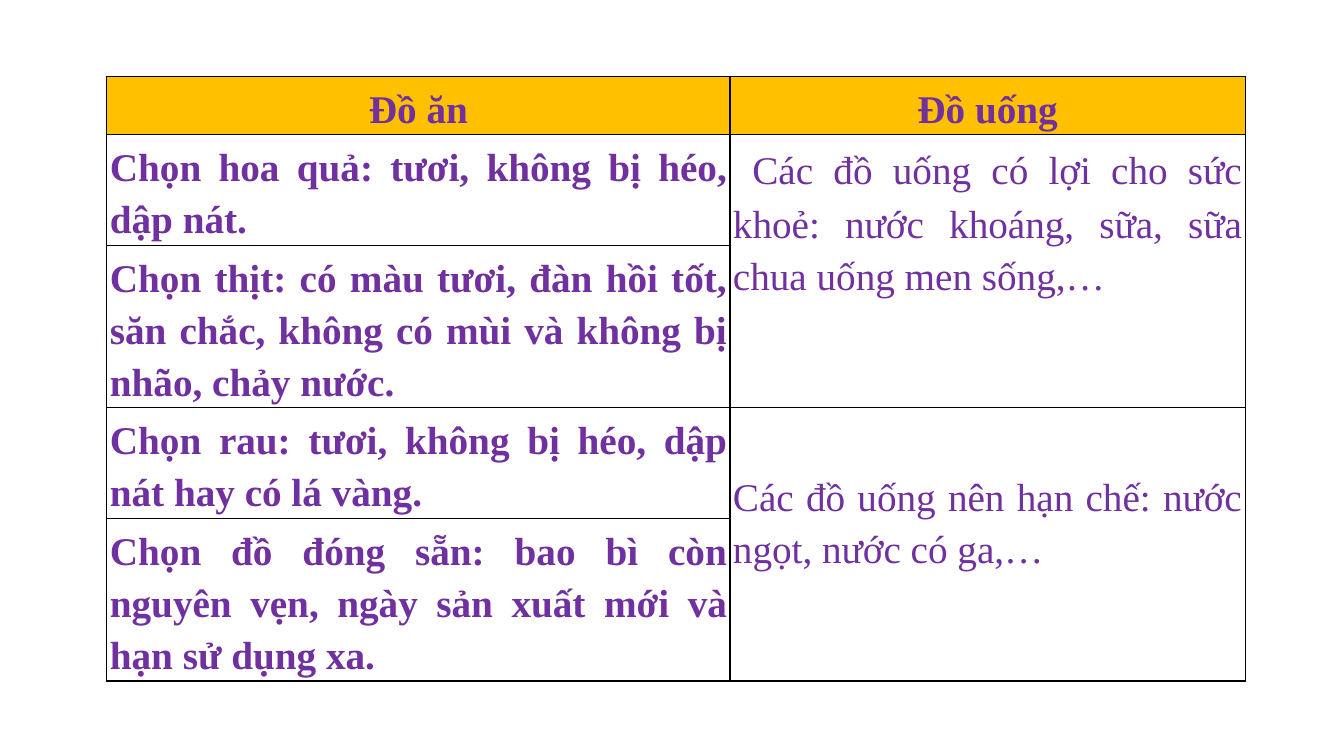
from lxml import etree
from pptx import Presentation
from pptx import util as u
from pptx.dml.color import RGBColor
from pptx.enum import text
from pptx.oxml import ns

PURPLE = RGBColor(0x70, 0x30, 0xA0)
GOLD = RGBColor(0xFF, 0xC0, 0x00)
WHITE = RGBColor(0xFF, 0xFF, 0xFF)
BLACK = RGBColor(0x00, 0x00, 0x00)

COLUMN_WIDTHS = [6.18, 5.11]
ROW_HEIGHTS = [0.57, 1.1, 1.61, 1.1, 1.61]
PADDING = 0.03
BLANK_LINE = 0.57

FOODS = [
    "Chọn hoa quả: tươi, không bị héo, dập nát.",
    "Chọn thịt: có màu tươi, đàn hồi tốt, săn chắc, không có mùi và không bị nhão, chảy nước.",
    "Chọn rau: tươi, không bị héo, dập nát hay có lá vàng.",
    "Chọn đồ đóng sẵn: bao bì còn nguyên vẹn, ngày sản xuất mới và hạn sử dụng xa.",
]
GOOD_DRINKS = "Các đồ uống có lợi cho sức khoẻ: nước khoáng, sữa, sữa chua uống men sống,…"
LIMITED_DRINKS = "Các đồ uống nên hạn chế: nước ngọt, nước có ga,…"


def write(cell, runs, bold, alignment=text.PP_ALIGN.JUSTIFY):
    """Fill a cell with one paragraph of (wording, font name) runs."""
    paragraph = cell.text_frame.paragraphs[0]
    paragraph.alignment = alignment
    paragraph.line_spacing = 1.2
    for wording, font_name in runs:
        run = paragraph.add_run()
        run.text = wording
        run.font.name = font_name
        run.font.size = u.Pt(28)
        run.font.bold = bold
        run.font.color.rgb = PURPLE


def style_cell(cell, fill_color):
    """Set the margins, black borders and fill of a cell."""
    cell.margin_left = cell.margin_right = u.Inches(PADDING)
    cell.margin_top = cell.margin_bottom = u.Inches(PADDING)
    properties = cell._tc.get_or_add_tcPr()
    for side in ("a:lnL", "a:lnR", "a:lnT", "a:lnB"):
        line = etree.SubElement(properties, ns.qn(side), w=str(u.Pt(1)))
        solid = etree.SubElement(line, ns.qn("a:solidFill"))
        etree.SubElement(solid, ns.qn("a:srgbClr"), val=str(BLACK))
    cell.fill.solid()
    cell.fill.fore_color.rgb = fill_color


presentation = Presentation()
presentation.slide_width = u.Inches(13.33)
presentation.slide_height = u.Inches(7.5)
slide = presentation.slides.add_slide(presentation.slide_layouts[6])

# Table grid
table = slide.shapes.add_table(
    len(ROW_HEIGHTS), len(COLUMN_WIDTHS), u.Inches(1.06), u.Inches(0.76),
    u.Inches(sum(COLUMN_WIDTHS)), u.Inches(sum(ROW_HEIGHTS))).table
for column, width in zip(table.columns, COLUMN_WIDTHS):
    column.width = u.Inches(width)
for row_number, height in enumerate(ROW_HEIGHTS):
    table.rows[row_number].height = u.Inches(height)
    for cell in table.rows[row_number].cells:
        style_cell(cell, GOLD if row_number == 0 else WHITE)

# Header row
for column_number, heading in enumerate(["Đồ ăn", "Đồ uống"]):
    write(table.cell(0, column_number), [(heading, "Times New Roman")], True,
          text.PP_ALIGN.CENTER)

# Food column
for row_number, food in enumerate(FOODS, start=1):
    write(table.cell(row_number, 0), [(food, "Times New Roman")], True)

# Drink column: each cell spans two food rows
for top_row in (1, 3):
    table.cell(top_row, 1).merge(table.cell(top_row + 1, 1))
write(table.cell(1, 1), [(" ", "Calibri"), (GOOD_DRINKS, "Times New Roman")], False)
limited_cell = table.cell(3, 1)
limited_cell.margin_top = u.Inches(PADDING + BLANK_LINE)
write(limited_cell, [(LIMITED_DRINKS, "Times New Roman")], False)

presentation.save("out.pptx")
